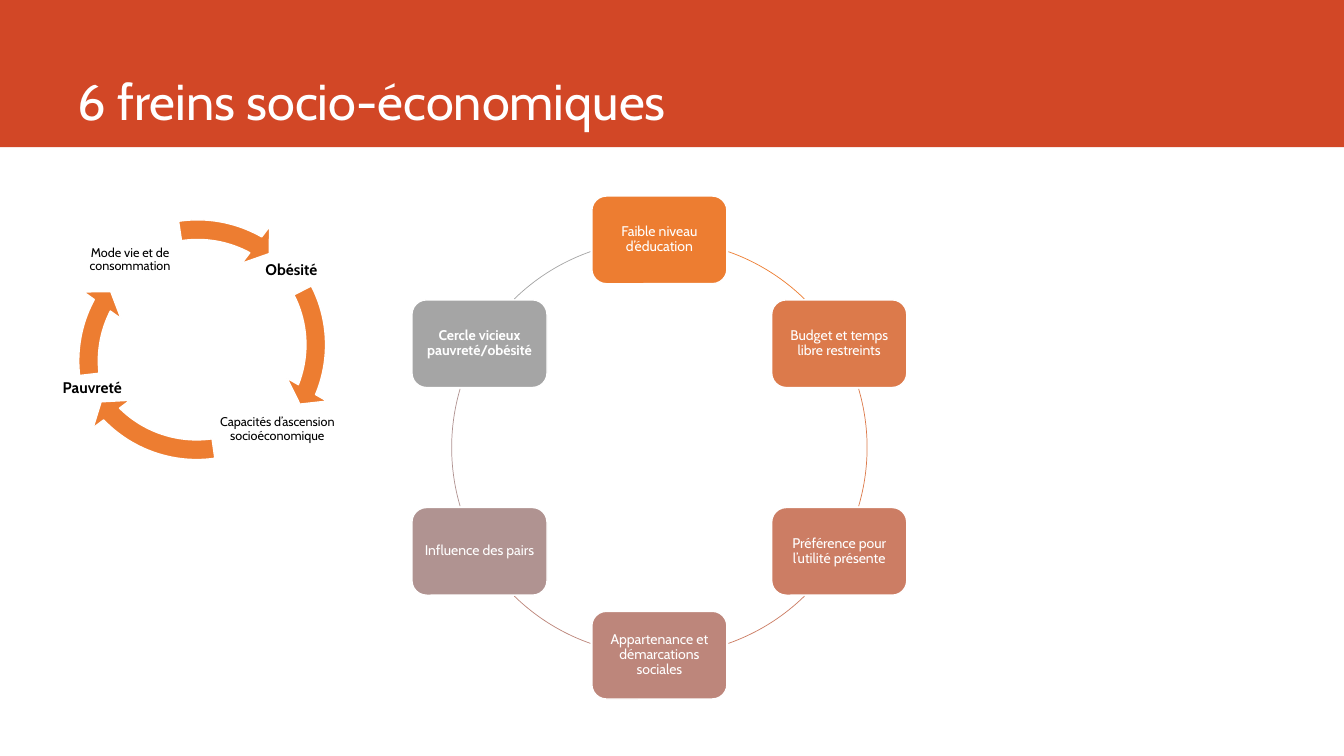
import math

import pptx
import pptx.dml.color
import pptx.enum.shapes
import pptx.enum.text
import pptx.util

Inches = pptx.util.Inches
Pt = pptx.util.Pt
Shape = pptx.enum.shapes.MSO_SHAPE
Align = pptx.enum.text.PP_ALIGN
Anchor = pptx.enum.text.MSO_ANCHOR

COLOURS = {"banner": "D24726", "orange": "ED7D31", "white": "FFFFFF", "black": "000000"}
FONT = "Cabin"
TITLE = "6 freins socio-économiques"

# Text, colour, bold; clockwise from the top
BRAKES = [
    ("Faible niveau d’éducation", "ED7D31", False),
    ("Budget et temps libre restreints", "DC7A4B", False),
    ("Préférence pour l’utilité présente", "CC7D64", False),
    ("Appartenance et démarcations sociales", "BD867B", False),
    ("Influence des pairs", "B09391", False),
    ("Cercle vicieux pauvreté/obésité", "A5A5A5", True),
]
RING_CENTRE = (6.54, 4.44)
RING_RADIUS = 2.06
CARD_SIZE = (1.34, 0.87)
# Start and end of each link, in degrees clockwise from the top
LINK_ANGLES = [(19.4, 44.3), (73.6, 106.4), (135.7, 160.6),
               (199.4, 224.3), (253.6, 286.4), (315.7, 340.6)]

# Text, box, size, bold
CYCLE_LABELS = [
    ("Obésité", (2.39, 2.5, 1, 0.37), 11, True),
    ("Capacités d’ascension socioéconomique", (2.12, 4.02, 1.26, 0.48), 9, False),
    ("Pauvreté", (0.36, 3.71, 1.11, 0.28), 11, True),
    ("Mode vie et de consommation", (0.72, 2.28, 1.14, 0.6), 9, False),
]
# Left, top, end setting, start setting
CYCLE_ARROWS = [
    (0.54, 2.01, 13.293, 199.722),
    (0.54, 1.87, 81.324, 49.126),
    (0.65, 2.17, 124.684, 104.093),
    (0.55, 2.05, 179.528, 156.911),
]
ARROW_SIZE = 2.82


def rgb(value):
    return pptx.dml.color.RGBColor.from_string(value)


def add_shape(slide, kind, box, fill=None, line=None, line_width=1, adjustments=()):
    shape = slide.shapes.add_shape(kind, *map(Inches, box))
    shape.shadow.inherit = False
    for index, value in enumerate(adjustments):
        shape.adjustments[index] = value
    if fill:
        shape.fill.solid()
        shape.fill.fore_color.rgb = rgb(fill)
    else:
        shape.fill.background()
    if line:
        shape.line.color.rgb = rgb(line)
        shape.line.width = Pt(line_width)
    else:
        shape.line.fill.background()
    return shape


def write_text(shape, text, size=10, colour=COLOURS["white"], bold=False,
               align=Align.CENTER, anchor=Anchor.MIDDLE, margins=(0.08, 0.08), spacing=0.9):
    frame = shape.text_frame
    frame.word_wrap = True
    frame.vertical_anchor = anchor
    frame.margin_left = frame.margin_right = Inches(margins[0])
    frame.margin_top = frame.margin_bottom = Inches(margins[1])
    paragraph = frame.paragraphs[0]
    paragraph.alignment = align
    paragraph.line_spacing = spacing
    run = paragraph.add_run()
    run.text = text
    run.font.name = FONT
    run.font.size = Pt(size)
    run.font.bold = bold
    run.font.color.rgb = rgb(colour)


def add_title(slide):
    add_shape(slide, Shape.RECTANGLE, (0, 0, 13.33, 1.46), COLOURS["banner"])
    title = slide.shapes.add_textbox(*map(Inches, (0.67, 0, 11.74, 1.34)))
    write_text(title, TITLE, size=36, align=Align.LEFT, anchor=Anchor.BOTTOM,
               margins=(0.1, 0.05), spacing=1.0)


def add_ring(slide):
    centre_x, centre_y = RING_CENTRE
    width, height = CARD_SIZE
    ring_box = (centre_x - RING_RADIUS, centre_y - RING_RADIUS, 2 * RING_RADIUS, 2 * RING_RADIUS)
    for index, ((text, colour, bold), angles) in enumerate(zip(BRAKES, LINK_ANGLES)):
        turn = math.radians(index * 360 / len(BRAKES))
        left = centre_x + RING_RADIUS * math.sin(turn) - width / 2
        top = centre_y - RING_RADIUS * math.cos(turn) - height / 2
        card = add_shape(slide, Shape.ROUNDED_RECTANGLE, (left, top, width, height),
                         colour, COLOURS["white"])
        write_text(card, text, bold=bold)
        # Arc settings count 0.6 per degree, clockwise from the right
        settings = [(angle - 90) % 360 * 0.6 for angle in angles]
        add_shape(slide, Shape.ARC, ring_box, line=colour, line_width=0.5, adjustments=settings)


def add_cycle(slide):
    for (text, box, size, bold), (left, top, end, start) in zip(CYCLE_LABELS, CYCLE_ARROWS):
        label = slide.shapes.add_textbox(*map(Inches, box))
        write_text(label, text, size=size, colour=COLOURS["black"], bold=bold, margins=(0.01, 0.01))
        add_shape(slide, Shape.CIRCULAR_ARROW, (left, top, ARROW_SIZE, ARROW_SIZE),
                  COLOURS["orange"], COLOURS["white"],
                  adjustments=(0.069, 4.653, end, start, 0.081))


def main():
    presentation = pptx.Presentation()
    presentation.slide_width = Inches(13.33)
    presentation.slide_height = Inches(7.5)
    slide = presentation.slides.add_slide(presentation.slide_layouts[6])
    add_title(slide)
    add_ring(slide)
    add_cycle(slide)
    presentation.save("out.pptx")


if __name__ == "__main__":
    main()
